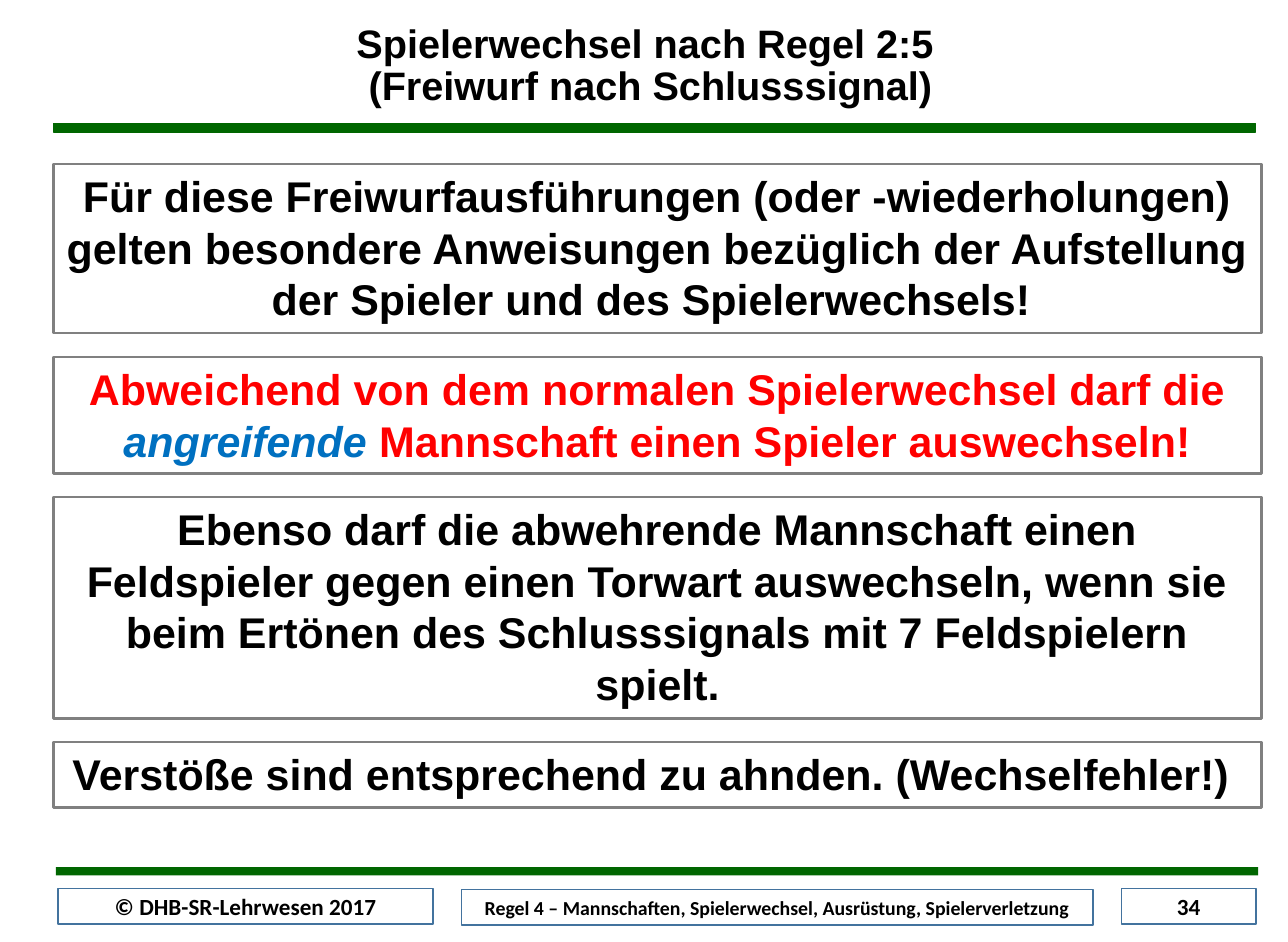
from pptx import Presentation
from pptx import util as u
from pptx.dml.color import RGBColor
from pptx.enum import shapes, text

GREEN = "006600"
BLACK = "000000"
RED = "FF0000"
LEFT, WIDTH = 0.45, 10.16
TOP, GAP = 1.38, 0.2


def color(value):
    return RGBColor.from_string(value)


def format_run(r, size, name, value=BLACK, italic=False):
    r.font.size = u.Pt(size)
    r.font.name = name
    r.font.bold = True
    r.font.italic = italic
    r.font.color.rgb = color(value)


def add_rect(s, x, y, w, h, fill, line=None, weight=1):
    sp = s.shapes.add_shape(shapes.MSO_SHAPE.RECTANGLE,
                            u.Inches(x), u.Inches(y), u.Inches(w), u.Inches(h))
    sp.shadow.inherit = False
    sp.fill.solid()
    sp.fill.fore_color.rgb = color(fill)
    if line:
        sp.line.color.rgb = color(line)
        sp.line.width = u.Pt(weight)
    else:
        sp.line.fill.background()
    return sp


def add_title(s, content):
    sp = s.shapes.title
    sp.left, sp.top = u.Inches(2.69), u.Inches(0.15)
    sp.width, sp.height = u.Inches(5.56), u.Inches(0.84)
    tf = sp.text_frame
    tf.text = content
    tf.word_wrap = True
    tf.auto_size = text.MSO_AUTO_SIZE.NONE
    tf.vertical_anchor = text.MSO_ANCHOR.TOP
    for p in tf.paragraphs:
        p.alignment = text.PP_ALIGN.CENTER
        p.line_spacing = 0.9
        p.space_before = u.Pt(0)
        format_run(p.runs[0], 24, "Arial")


def add_footer(s, x, y, w, content, size):
    sp = add_rect(s, x, y, w, 0.3, "FFFFFF", "43739E")
    tf = sp.text_frame
    tf.text = content
    tf.vertical_anchor = text.MSO_ANCHOR.MIDDLE
    p = tf.paragraphs[0]
    p.alignment = text.PP_ALIGN.CENTER
    format_run(p.runs[0], size, "Calibri")


def add_statement(s, y, h, parts):
    sp = add_rect(s, LEFT, y, WIDTH, h, "FFFFFF", "808080", 1.5)
    tf = sp.text_frame
    tf.word_wrap = True
    tf.auto_size = text.MSO_AUTO_SIZE.SHAPE_TO_FIT_TEXT
    tf.vertical_anchor = text.MSO_ANCHOR.TOP
    tf.margin_left = tf.margin_right = u.Inches(0.11)
    tf.margin_top = tf.margin_bottom = u.Inches(0.05)
    p = tf.paragraphs[0]
    p.alignment = text.PP_ALIGN.CENTER
    for content, value, italic in parts:
        r = p.add_run()
        r.text = content
        format_run(r, 26, "Arial", value, italic)


def main():
    prs = Presentation()
    prs.slide_width, prs.slide_height = u.Inches(10.83), u.Inches(7.92)
    s = prs.slides.add_slide(prs.slide_layouts[5])

    add_title(s, "Spielerwechsel nach Regel 2:5 \n(Freiwurf nach Schlusssignal)")
    add_rect(s, LEFT, 1.04, 10.11, 0.07, GREEN, GREEN, 0.75)
    add_rect(s, 0.47, 7.29, 10.11, 0.07, GREEN)

    statements = [
        (1.42, [("Für diese Freiwurfausführungen (oder -wiederholungen) gelten "
                 "besondere Anweisungen bezüglich der Aufstellung der Spieler "
                 "und des Spielerwechsels! ", BLACK, False)]),
        (0.98, [("Abweichend von dem normalen Spielerwechsel darf die ", RED, False),
                ("angreifende ", "0070C0", True),
                ("Mannschaft einen Spieler auswechseln!", RED, False)]),
        (1.86, [("Ebenso darf die abwehrende Mannschaft einen Feldspieler gegen "
                 "einen Torwart auswechseln, wenn sie beim Ertönen des "
                 "Schlusssignals mit 7 Feldspielern spielt.", BLACK, False)]),
        (0.55, [("Verstöße sind entsprechend zu ahnden. (Wechselfehler!) ",
                 BLACK, False)]),
    ]
    y = TOP
    for h, parts in statements:
        add_statement(s, y, h, parts)
        y += h + GAP

    add_footer(s, 0.49, 7.47, 3.15, "© DHB-SR-Lehrwesen 2017", 14)
    add_footer(s, 3.88, 7.48, 5.31, "Regel 4 – Mannschaften, Spielerwechsel, "
               "Ausrüstung, Spielerverletzung", 12)
    add_footer(s, 9.43, 7.47, 1.13, "34", 14)
    prs.save("out.pptx")


if __name__ == "__main__":
    main()
